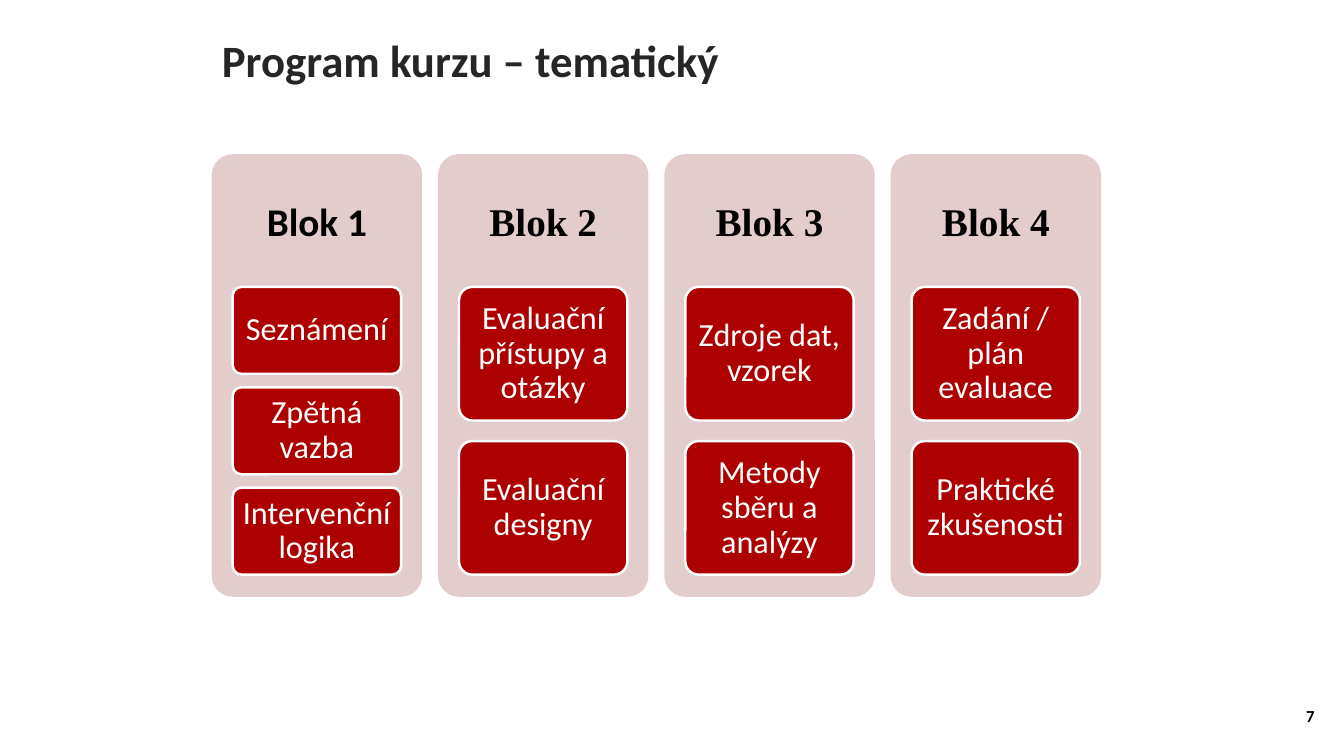
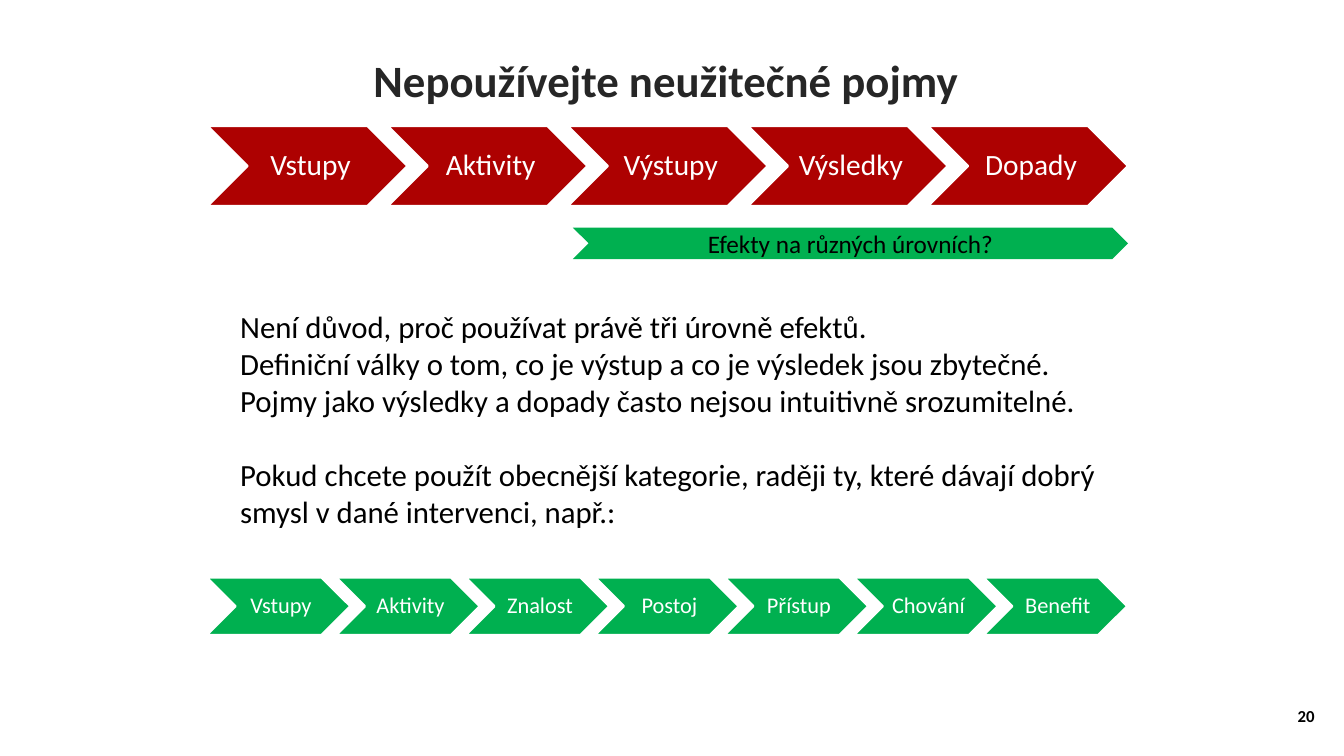
import dataclasses

import lxml.etree
import pptx
import pptx.dml.color
import pptx.enum.shapes
import pptx.enum.text
import pptx.oxml.ns
import pptx.util

ALIGN = pptx.enum.text.PP_ALIGN
ANCHOR = pptx.enum.text.MSO_ANCHOR
SHAPE = pptx.enum.shapes.MSO_SHAPE


@dataclasses.dataclass(frozen=True)
class Theme:
    # Colours
    black: str = "000000"
    white: str = "FFFFFF"
    heading: str = "262626"
    red: str = "AD0101"
    pink: str = "E3CCCC"
    green: str = "00B050"
    # Fonts and type sizes
    sans: str = "Calibri"
    serif: str = "Times New Roman"
    title_size: int = 32
    block_size: int = 28
    tile_size: int = 23
    body_size: int = 22
    chain_size: int = 21
    banner_size: int = 18
    small_chain_size: int = 16
    number_size: int = 12
    # Outline and paragraph spacing
    outline: float = 1.75
    tight: float = 0.9


THEME = Theme()
COLUMNS, ROWS = 160, 90
TITLE_AND_BODY, TITLE_ONLY = 1, 5


class Deck:
    """Holds the style and the current slide; lengths are grid columns and rows."""

    def __init__(self, theme):
        self.theme = theme
        self.presentation = pptx.Presentation()
        self.presentation.slide_width = pptx.util.Inches(13.33)
        self.presentation.slide_height = pptx.util.Inches(7.5)
        self.slide = None

    def box(self, left, top, width, height):
        across = self.presentation.slide_width / COLUMNS
        down = self.presentation.slide_height / ROWS
        return [round(left * across), round(top * down), round(width * across), round(height * down)]

    def place(self, shape, area):
        for name, value in zip(("left", "top", "width", "height"), self.box(*area)):
            setattr(shape, name, value)

    def set_text(self, shape, lines, size, color, align=ALIGN.CENTER, anchor=ANCHOR.MIDDLE,
                 bold=False, font=None, spacing=1.0, insets=(0.1, 0.05, 0.1, 0.05)):
        frame = shape.text_frame
        frame_format = {"word_wrap": True, "auto_size": pptx.enum.text.MSO_AUTO_SIZE.NONE,
                        "vertical_anchor": anchor}
        for side, inset in zip(("left", "top", "right", "bottom"), insets):
            frame_format["margin_" + side] = pptx.util.Inches(inset)
        paragraph_format = {"alignment": align, "line_spacing": spacing,
                            "space_before": pptx.util.Pt(0)}
        font_format = {"name": font or self.theme.sans, "size": pptx.util.Pt(size), "bold": bold}
        self.apply(frame, frame_format)
        for index, line in enumerate(lines):
            paragraph = frame.add_paragraph() if index else frame.paragraphs[0]
            self.apply(paragraph, paragraph_format)
            run = paragraph.add_run()
            run.text = line
            self.apply(run.font, font_format)
            run.font.color.rgb = pptx.dml.color.RGBColor.from_string(color)

    @staticmethod
    def apply(target, values):
        for name, value in values.items():
            setattr(target, name, value)

    def new_slide(self, layout, title, title_area, number, align=ALIGN.LEFT):
        theme = self.theme
        self.slide = self.presentation.slides.add_slide(self.presentation.slide_layouts[layout])
        heading = self.slide.shapes.title
        self.place(heading, title_area)
        self.set_text(heading, [title], theme.title_size, theme.heading, align, ANCHOR.BOTTOM, bold=True)
        number_box = self.slide.shapes.add_textbox(*self.box(148.1, 82.8, 9.6, 4.8))
        self.set_text(number_box, [number], theme.number_size, theme.black, ALIGN.RIGHT, bold=True)

    def body(self, lines, area, gap_before):
        """Fills the body placeholder; gap_before is the index of the paragraph set apart."""
        theme = self.theme
        body = self.slide.placeholders[1]
        self.place(body, area)
        self.set_text(body, lines, theme.body_size, theme.black, ALIGN.LEFT, ANCHOR.TOP)
        for paragraph in body.text_frame.paragraphs:
            properties = paragraph._p.get_or_add_pPr()
            properties.set("marL", "0")
            properties.set("indent", "0")
            lxml.etree.SubElement(properties, pptx.oxml.ns.qn("a:buNone"))
        body.text_frame.paragraphs[gap_before].space_before = pptx.util.Pt(theme.body_size * 1.22)

    def shape(self, kind, area, fill, text, size, color, outlined=False, adjustment=None, **text_format):
        shape = self.slide.shapes.add_shape(kind, *self.box(*area))
        shape.shadow.inherit = False
        shape.fill.solid()
        shape.fill.fore_color.rgb = pptx.dml.color.RGBColor.from_string(fill)
        if outlined:
            shape.line.color.rgb = pptx.dml.color.RGBColor.from_string(self.theme.white)
            shape.line.width = pptx.util.Pt(self.theme.outline)
        else:
            shape.line.fill.background()
        if adjustment is not None:
            shape.adjustments[0] = adjustment
        self.set_text(shape, [text], size, color, **text_format)

    def block(self, area, heading, font, tiles):
        """A panel with its heading in the top 30 % and tiles in the next 65 %."""
        theme = self.theme
        left, top, width, height = area
        self.shape(SHAPE.ROUNDED_RECTANGLE, area, theme.pink, heading, theme.block_size, theme.black,
                   adjustment=0.1, bold=True, font=font, spacing=theme.tight,
                   insets=(0.06, 0.06, 0.06, 3.07))
        gap_share = 0.154
        tile_height = 0.65 * height / (len(tiles) + gap_share * (len(tiles) - 1))
        for index, tile in enumerate(tiles):
            tile_top = top + 0.3 * height + index * tile_height * (1 + gap_share)
            self.shape(SHAPE.ROUNDED_RECTANGLE, (left + 0.1 * width, tile_top, 0.8 * width, tile_height),
                       theme.red, tile, theme.tile_size, theme.white, outlined=True, adjustment=0.1,
                       spacing=theme.tight, insets=(0.06, 0.05, 0.06, 0.05))

    def chain(self, left, top, span, steps, fill, size, insets):
        """Chevrons that overlap by a tenth of their width and fill the span."""
        pitch_share = 0.9
        width = span / (1 + pitch_share * (len(steps) - 1))
        for index, step in enumerate(steps):
            self.shape(SHAPE.CHEVRON, (left + index * pitch_share * width, top, width, 0.4 * width),
                       fill, step, size, self.theme.white, outlined=True, spacing=self.theme.tight,
                       insets=insets)


def course_program(deck):
    deck.new_slide(TITLE_ONLY, "Program kurzu – tematický", (25.2, 4.3, 101.2, 6.6), "7")
    blocks = [
        ("Blok 1", THEME.sans, ["Seznámení", "Zpětná vazba", "Intervenční logika"]),
        ("Blok 2", THEME.serif, ["Evaluační přístupy a otázky", "Evaluační designy"]),
        ("Blok 3", THEME.serif, ["Zdroje dat, vzorek", "Metody sběru a analýzy"]),
        ("Blok 4", THEME.serif, ["Zadání / plán evaluace", "Praktické zkušenosti"]),
    ]
    width = 25.06
    for index, (heading, font, tiles) in enumerate(blocks):
        deck.block((25.2 + index * 1.075 * width, 18.35, width, 52.7), heading, font, tiles)


def useless_terms(deck):
    deck.new_slide(TITLE_AND_BODY, "Nepoužívejte neužitečné pojmy", (6.2, 4.3, 146.2, 9), "20",
                   ALIGN.CENTER)
    # Usual chain and the banner over its three levels of effects
    deck.chain(24.7, 15, 109.6, ["Vstupy", "Aktivity", "Výstupy", "Výsledky", "Dopady"],
               THEME.red, THEME.chain_size, (0.09, 0.03, 0.03, 0.03))
    deck.shape(SHAPE.CHEVRON, (68.2, 27.1, 66.1, 3.75), THEME.green, "Efekty na různých úrovních?",
               THEME.banner_size, THEME.black)
    # Reasons
    deck.body([
        "Není důvod, proč používat právě tři úrovně efektů.",
        "Definiční války o tom, co je výstup a co je výsledek jsou zbytečné.",
        "Pojmy jako výsledky a dopady často nejsou intuitivně srozumitelné.",
        "Pokud chcete použít obecnější kategorie, raději ty, které dávají dobrý "
        "smysl v dané intervenci, např.:",
    ], (27.4, 36, 105.4, 27.8), gap_before=3)
    # Suggested chain
    deck.chain(24.6, 68.75, 109.6,
               ["Vstupy", "Aktivity", "Znalost", "Postoj", "Přístup", "Chování", "Benefit"],
               THEME.green, THEME.small_chain_size, (0.07, 0.02, 0.02, 0.02))


def main():
    deck = Deck(THEME)
    course_program(deck)
    useless_terms(deck)
    deck.presentation.save("out.pptx")


if __name__ == "__main__":
    main()
